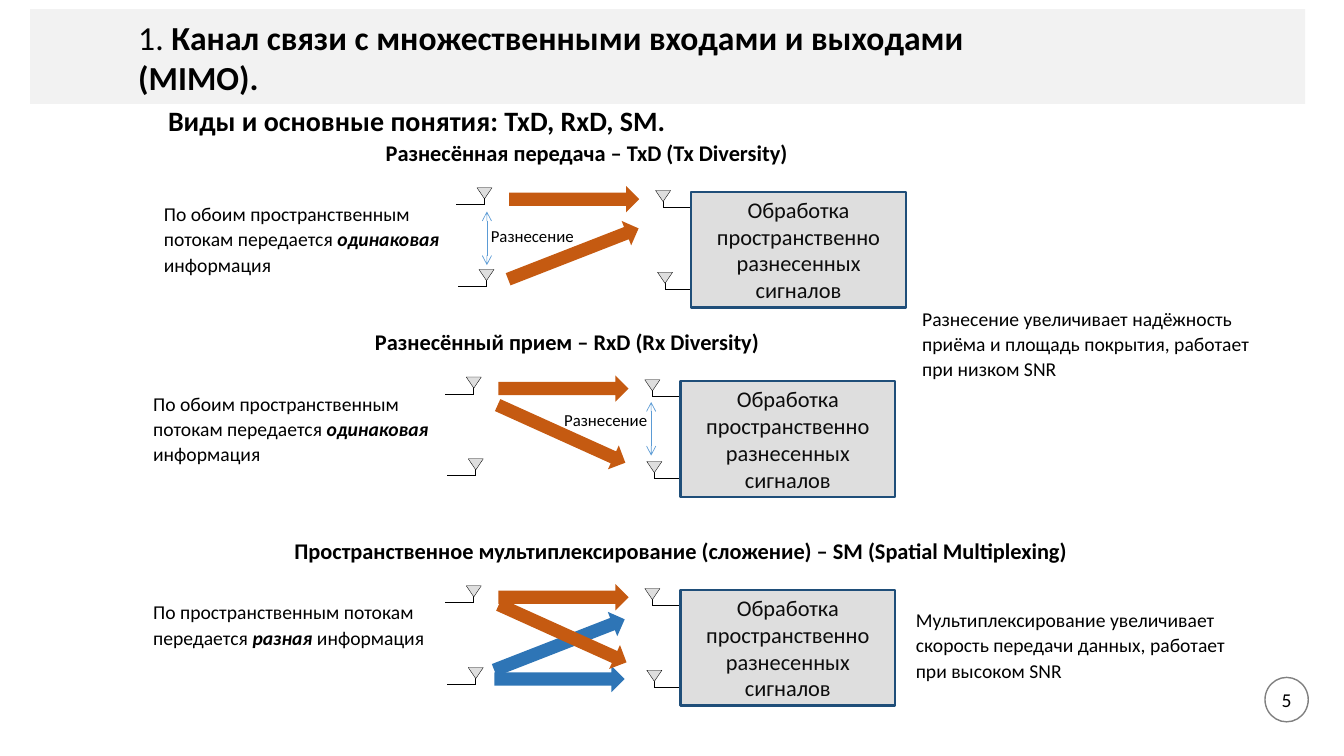
from lxml import etree
from pptx import Presentation
from pptx import util as u
from pptx.dml.color import RGBColor
from pptx.enum import shapes, text
from pptx.oxml import ns

HUES = {"band": "F2F2F2", "ink": "000000", "boxink": "0D0D0D", "grey": "DEDEDE",
        "navy": "1F4E79", "rust": "C55A11", "blue": "2E75B6", "sky": "5B9BD5",
        "white": "FFFFFF", "ring": "808080"}
KIND = shapes.MSO_SHAPE


def hue(name):
    return RGBColor.from_string(HUES[name])


def cms(*sizes):
    return [u.Cm(size) for size in sizes]


class Board:
    font = "Calibri"

    def __init__(self, slide):
        self.slide = slide
        self.items = slide.shapes

    def style(self, run, size, bold=False, slant=False, ink="ink"):
        font = run.font
        font.name, font.size = self.font, u.Pt(size)
        font.bold, font.italic = bold, slant
        font.color.rgb = hue(ink)

    def shape(self, kind, place, fill, line=None, width=1, turn=0):
        item = self.items.add_shape(kind, *cms(*place))
        item.shadow.inherit = False
        item.rotation = turn
        item.fill.solid()
        item.fill.fore_color.rgb = hue(fill)
        if line:
            item.line.color.rgb = hue(line)
            item.line.width = u.Pt(width)
        else:
            item.line.fill.background()
        return item

    def inner(self, item, words, size, ink, pads):
        """Centred text inside a shape."""
        frame = item.text_frame
        frame.text = words
        frame.word_wrap = True
        frame.vertical_anchor = text.MSO_ANCHOR.MIDDLE
        frame.margin_left = frame.margin_right = u.Cm(pads[0])
        frame.margin_top = frame.margin_bottom = u.Cm(pads[1])
        par = frame.paragraphs[0]
        par.alignment = text.PP_ALIGN.CENTER
        self.style(par.runs[0], size, ink=ink)

    def note(self, place, words, size=14, bold=False, key="", lead=1.07):
        """Text box; the key word is set in bold italics."""
        frame = self.items.add_textbox(*cms(*place)).text_frame
        frame.word_wrap = True
        par = frame.paragraphs[0]
        par.line_spacing, par.space_after = lead, u.Pt(8)
        parts = words.partition(key) if key else [words]
        for part in parts:
            run = par.add_run()
            run.text = part
            mark = bool(key) and part == key
            self.style(run, size, bold or mark, mark)

    def line(self, ends, ink="ink", heads=False):
        link = self.items.add_connector(shapes.MSO_CONNECTOR.STRAIGHT, *cms(*ends))
        link.line.color.rgb = hue(ink)
        link.line.width = u.Pt(0.5)
        props = link._element.spPr
        if heads:
            stroke = props.find(ns.qn("a:ln"))
            for tag in ("a:headEnd", "a:tailEnd"):
                etree.SubElement(stroke, ns.qn(tag), type="arrow")
        etree.SubElement(props, ns.qn("a:effectLst"))

    def aerial(self, x, y, side):
        """Antenna with its tip down at x; side is -1 for left, 1 for right."""
        self.line((x, y + 0.25, x, y + 0.43))
        self.line((x, y + 0.43, x + side * 0.72, y + 0.43))
        self.shape(KIND.ISOSCELES_TRIANGLE, (x - 0.19, y, 0.38, 0.28),
                   "grey", "ink", 0.25, 180)

    def beam(self, x, y, turn, fill):
        size = 3.28 if turn == 270 else 3.53
        self.shape(KIND.DOWN_ARROW, (x, y, 0.66, size), fill, turn=turn)

    def gap(self, x, y, left, top):
        """Spacing between two antennas and its label."""
        self.line((x, y, x, y + 1.35), "sky", True)
        self.note((left, top, 3.2, 0.76), "Разнесение", 12, lead=1.0)

    def scheme(self, x, y, head, words, key, beams):
        """One link scheme, placed from the corner of its box."""
        name, shift, wide = head
        self.note((x + shift, y - 1.5, wide, 0.99), name, 16, True)
        for dx, dy, side in AERIALS:
            self.aerial(x + dx, y + dy, side)
        for dx, dy, turn, fill in beams:
            self.beam(x + dx, y + dy, turn, fill)
        box = self.shape(KIND.RECTANGLE, (x, y, 5.41, 2.92), "grey", "navy", 1.5)
        self.inner(box, "Обработка пространственно разнесенных сигналов",
                   16, "boxink", (0.1, 0.13))
        self.note((x - 13.54, y + 0.1, 8.15, 2.18), words, key=key)

    def title(self, place, number, name, lower):
        item = self.items.title
        item.left, item.top, item.width, item.height = cms(*place)
        frame = item.text_frame
        frame.text = number
        frame.word_wrap = True
        frame.auto_size = text.MSO_AUTO_SIZE.NONE
        frame.vertical_anchor = text.MSO_ANCHOR.TOP
        first, second = frame.paragraphs[0], frame.add_paragraph()
        first.add_run().text = name
        second.text = lower
        second._p.get_or_add_pPr().set("marL", str(u.Cm(0.75)))
        for par, above in ((first, 0), (second, 4)):
            par.alignment = text.PP_ALIGN.LEFT
            par.line_spacing, par.space_before = 1.0, u.Pt(above)
        self.style(first.runs[0], 24)
        self.style(first.runs[1], 24, True)
        self.style(second.runs[0], 20, True)
        self.items._spTree.append(item._element)


# Antennas: offset from the box corner and side of the feed
AERIALS = [(-5.21, -0.1, -1), (-5.16, 1.96, -1), (-0.71, -0.03, 1), (-0.66, 2.03, 1)]
TOP = (-3.28, -1.45, 270, "rust")
SAME = "По обоим пространственным потокам передается одинаковая информация"
SCHEMES = [
    (17.42, 4.83, ("Разнесённая передача – TxD (Tx Diversity)", -7.95, 10.69),
     SAME, "одинаковая", [TOP, (-3.3, -0.2, 248.7, "rust")]),
    (17.15, 9.6, ("Разнесённый прием – RxD (Rx Diversity)", -7.95, 10.69),
     SAME, "одинаковая", [TOP, (-3.33, -0.43, 294.3, "rust")]),
    (17.15, 14.86,
     ("Пространственное мультиплексирование (сложение) – SM (Spatial Multiplexing)",
      -9.98, 20.52),
     "По пространственным потокам передается разная информация", "разная",
     [TOP, (-3.38, 0.61, 270, "blue"), (-3.38, -0.38, 248.7, "blue"),
      (-3.3, -0.66, 294.3, "rust")]),
]


def main():
    deck = Presentation()
    deck.slide_width, deck.slide_height = cms(33.87, 19.05)
    board = Board(deck.slides.add_slide(deck.slide_layouts[5]))

    # Heading band
    board.shape(KIND.RECTANGLE, (0.76, 0.23, 32.13, 2.39), "band")
    board.title((3.23, 0.3, 23.34, 3.2), "1. ",
                "Канал связи с множественными входами и выходами (MIMO).",
                "Виды и основные понятия: TxD, RxD, SM.")

    # Three link schemes
    for scheme in SCHEMES:
        board.scheme(*scheme)
    board.gap(12.27, 5.33, 12.12, 5.56)
    board.gap(16.41, 10.13, 13.97, 10.21)

    # Remarks on the right
    board.note((22.99, 7.57, 9.47, 2.18), "Разнесение увеличивает надёжность "
               "приёма и площадь покрытия, работает при низком SNR")
    board.note((22.83, 15.16, 8.99, 2.18), "Мультиплексирование увеличивает "
               "скорость передачи данных, работает при высоком SNR")

    # Page number
    disc = board.shape(KIND.OVAL, (31.88, 17.07, 1.09, 1.12), "white", "ring")
    board.inner(disc, "5", 14, "ink", (0, 0))

    deck.save("out.pptx")


if __name__ == "__main__":
    main()
